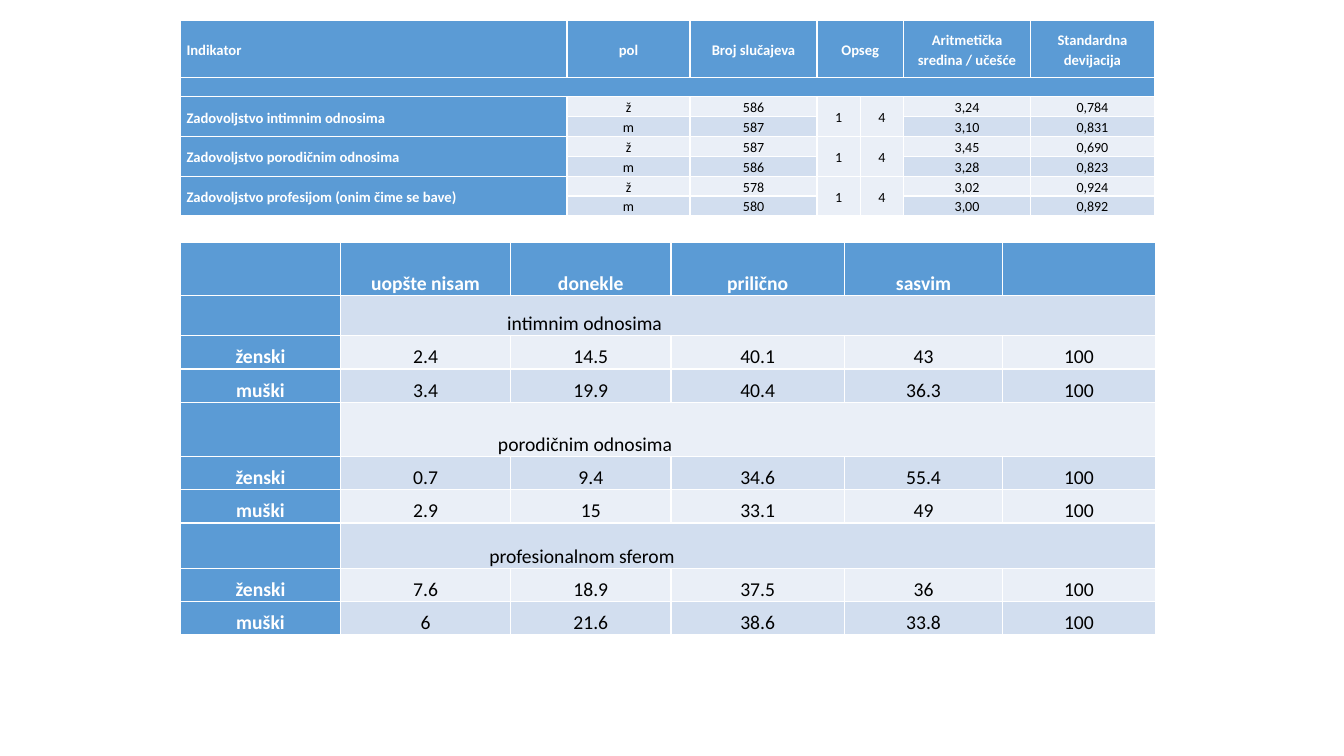
from pptx import Presentation
from pptx.dml.color import RGBColor
from pptx.enum.text import MSO_ANCHOR, PP_ALIGN
from pptx.util import Cm, Pt

CENTER, JUSTIFY, LEFT = PP_ALIGN.CENTER, PP_ALIGN.JUSTIFY, PP_ALIGN.LEFT
MIDDLE, BOTTOM = MSO_ANCHOR.MIDDLE, MSO_ANCHOR.BOTTOM

FONT = "Calibri"
HEADER, DARK_BAND, LIGHT_BAND = "5B9BD5", "D2DEEF", "EAEFF7"
WHITE, BLACK = "FFFFFF", "000000"
EMPTY_SIZE = 8
TABLE_LEFT = 4.55

INDICATOR_COLUMNS = [9.74, 3.1, 3.2, 1.09, 1.09, 3.2, 3.12]
INDICATOR_ROWS = [1.45, 0.48] + [0.5] * 6
INDICATOR_HEADINGS = ["Indikator", "pol", "Broj slučajeva", "Opseg", "",
                      "Aritmetička sredina / učešće", "Standardna devijacija"]
INDICATORS = [
    ("Zadovoljstvo intimnim odnosima",
     ("586", "3,24", "0,784"), ("587", "3,10", "0,831")),
    ("Zadovoljstvo porodičnim odnosima",
     ("587", "3,45", "0,690"), ("586", "3,28", "0,823")),
    ("Zadovoljstvo profesijom (onim čime se bave)",
     ("578", "3,02", "0,924"), ("580", "3,00", "0,892")),
]

ANSWER_COLUMNS = [4.03, 4.29, 4.04, 4.37, 3.99, 3.84]
ANSWER_ROW = 0.84
ANSWER_HEADER_ROW = 1.35
ANSWER_HEADINGS = ["", "uopšte nisam", "donekle", "prilično", "sasvim", ""]
# Group title, row height, left margin, shares of women, shares of men
ANSWER_GROUPS = [
    ("intimnim odnosima", 1.01, 4.2,
     ["2.4", "14.5", "40.1", "43", "100"], ["3.4", "19.9", "40.4", "36.3", "100"]),
    ("porodičnim odnosima", 1.36, 3.97,
     ["0.7", "9.4", "34.6", "55.4", "100"], ["2.9", "15", "33.1", "49", "100"]),
    ("profesionalnom sferom", 1.14, 3.75,
     ["7.6", "18.9", "37.5", "36", "100"], ["6", "21.6", "38.6", "33.8", "100"]),
]


def color(hex_string):
    return RGBColor.from_string(hex_string)


def add_grid(slide, top, columns, rows):
    """Add a table with the given column widths and row heights in centimetres."""
    table = slide.shapes.add_table(len(rows), len(columns), Cm(TABLE_LEFT), Cm(top),
                                   Cm(sum(columns)), Cm(sum(rows))).table
    table.first_col = True
    table.horz_banding = False
    for column, width in zip(table.columns, columns):
        column.width = Cm(width)
    for row, height in zip(table.rows, rows):
        row.height = Cm(height)
    return table


def format_cell(cell, text, fill, size, anchor, margin, spacing):
    is_header = fill == HEADER
    cell.fill.solid()
    cell.fill.fore_color.rgb = color(fill)
    cell.vertical_anchor = anchor
    cell.margin_left = cell.margin_right = Cm(margin)
    cell.margin_top = cell.margin_bottom = 0
    cell.text = text
    paragraph = cell.text_frame.paragraphs[0]
    paragraph.alignment = CENTER
    paragraph.line_spacing = spacing
    font = paragraph.font
    font.name = FONT
    font.size = Pt(size)
    font.bold = is_header
    font.color.rgb = color(WHITE if is_header else BLACK)
    if not text:
        font.size = Pt(EMPTY_SIZE)
        # An empty line takes its height from the end-of-paragraph size
        paragraph._p.get_or_add_endParaRPr().set("sz", str(EMPTY_SIZE * 100))


def add_indicator_table(slide):
    table = add_grid(slide, 0.51, INDICATOR_COLUMNS, INDICATOR_ROWS)
    rows = [INDICATOR_HEADINGS, [""] * len(INDICATOR_COLUMNS)]
    for name, (count_f, mean_f, deviation_f), (count_m, mean_m, deviation_m) in INDICATORS:
        rows.append([name, "ž", count_f, "1", "4", mean_f, deviation_f])
        rows.append(["", "m", count_m, "", "", mean_m, deviation_m])
    for row, texts in enumerate(rows):
        for column, text in enumerate(texts):
            is_header = row < 2 or column == 0
            band = DARK_BAND if row % 2 else LIGHT_BAND
            cell = table.cell(row, column)
            format_cell(cell, text, HEADER if is_header else band,
                        10.5 if is_header else 10, MIDDLE, 0.15, 1.15)
            if column == 0:
                cell.text_frame.paragraphs[0].alignment = JUSTIFY
    table.cell(0, 3).merge(table.cell(0, 4))
    table.cell(1, 0).merge(table.cell(1, len(INDICATOR_COLUMNS) - 1))
    for row in range(2, len(rows), 2):
        for column in (0, 3, 4):
            table.cell(row, column).merge(table.cell(row + 1, column))


def add_answer_table(slide):
    heights, rows = [ANSWER_HEADER_ROW], [ANSWER_HEADINGS]
    for title, height, _, women, men in ANSWER_GROUPS:
        heights += [height, ANSWER_ROW, ANSWER_ROW]
        rows += [["", title, "", "", "", ""], ["ženski"] + women, ["muški"] + men]
    table = add_grid(slide, 6.1, ANSWER_COLUMNS, heights)
    for row, texts in enumerate(rows):
        for column, text in enumerate(texts):
            is_header = row == 0 or column == 0
            band = DARK_BAND if row % 2 else LIGHT_BAND
            format_cell(table.cell(row, column), text, HEADER if is_header else band,
                        14, BOTTOM, 0.18, 1.07)
    for group, (_, _, indent, _, _) in enumerate(ANSWER_GROUPS):
        row = 1 + 3 * group
        title_cell = table.cell(row, 1)
        title_cell.merge(table.cell(row, len(ANSWER_COLUMNS) - 1))
        title_cell.margin_left = Cm(indent)
        title_cell.text_frame.paragraphs[0].alignment = LEFT


def main():
    presentation = Presentation()
    presentation.slide_width = Cm(33.87)
    presentation.slide_height = Cm(19.05)
    slide = presentation.slides.add_slide(presentation.slide_layouts[6])
    add_indicator_table(slide)
    add_answer_table(slide)
    presentation.save("out.pptx")


if __name__ == "__main__":
    main()
